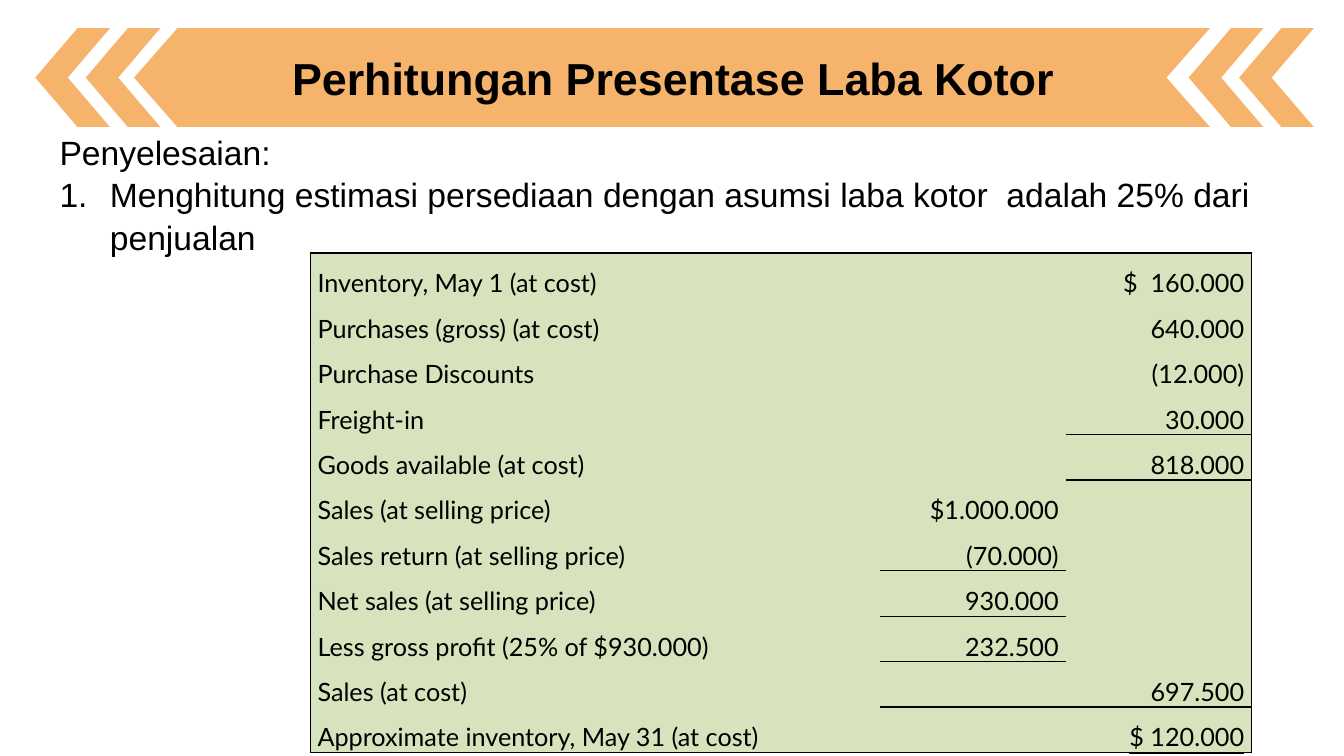
"""Build the gross profit percentage slide on a grid of 1333 by 750 cells."""
from lxml import etree
from pptx import Presentation, util as u
from pptx.dml.color import RGBColor
from pptx.enum import shapes, text
from pptx.oxml import ns

HUES = {"band": "F3932D", "ink": "000000", "table": "D6E3BC"}
CELL = u.Inches(0.01)
ROWS = [
    ("Inventory, May 1 (at cost)", "", "$  160.000"),
    ("Purchases (gross) (at cost)", "", "640.000"),
    ("Purchase Discounts", "", "(12.000)"),
    ("Freight-in", "", "30.000"),
    ("Goods available (at cost)", "", "818.000"),
    ("Sales (at selling price)", "$1.000.000", ""),
    ("Sales return (at selling price)", "(70.000)", ""),
    ("Net sales (at selling price)", "930.000", ""),
    ("Less gross profit (25% of $930.000)", "232.500", ""),
    ("Sales (at cost)", "", "697.500"),
    ("Approximate inventory, May 31 (at cost)", "", "$ 120.000"),
]
SUMS = {(3, 2), (6, 1), (8, 1), (9, 2)}


def paint(shape):
    shape.shadow.inherit = False
    shape.line.fill.background()
    shape.fill.solid()
    shape.fill.fore_color.rgb = RGBColor.from_string(HUES["band"])
    hue = shape.element.spPr.find(ns.qn("a:solidFill"))[0]
    etree.SubElement(hue, ns.qn("a:alpha"), val="70000")


def style(para, size, face, bold=False):
    for run in para.runs:
        run.font.size = u.Pt(size)
        run.font.name = face
        run.font.bold = bold
        run.font.color.rgb = RGBColor.from_string(HUES["ink"])


deck = Presentation()
deck.slide_width, deck.slide_height = 1333 * CELL, 750 * CELL
slide = deck.slides.add_slide(deck.slide_layouts[1])

for left in (35, 85, 1179, 1229):
    mark = slide.shapes.add_shape(
        shapes.MSO_SHAPE.CHEVRON, left * CELL, 28 * CELL, 74 * CELL, 98 * CELL)
    mark.adjustments[0] = 0.565
    mark.rotation = 180
    paint(mark)

pen = slide.shapes.build_freeform(176, 28, scale=CELL)
pen.add_line_segments(
    [(1200, 28), (1157, 77), (1200, 126), (176, 126), (133, 77)], close=True)
paint(pen.convert_to_shape())

title, body = slide.shapes.title, slide.placeholders[1]
for holder, box in ((title, (35, 37, 1266, 79)), (body, (49, 124, 1232, 131))):
    holder.left, holder.top, holder.width, holder.height = [n * CELL for n in box]
    holder.element.getparent().append(holder.element)
    holder.text_frame.word_wrap = True
    holder.text_frame.auto_size = text.MSO_AUTO_SIZE.NONE

title.text_frame.text = "Perhitungan Presentase Laba Kotor"
title.text_frame.vertical_anchor = text.MSO_ANCHOR.MIDDLE
head = title.text_frame.paragraphs[0]
head.alignment = text.PP_ALIGN.CENTER
style(head, 32, "Arial", True)

body.text_frame.vertical_anchor = text.MSO_ANCHOR.TOP
body.text_frame.text = (
    "Penyelesaian:\n"
    "Menghitung estimasi persediaan dengan asumsi laba kotor  adalah 25% dari penjualan")
for para, dent, kind in zip(body.text_frame.paragraphs, (0, 50), ("buNone", "buAutoNum")):
    para.alignment = text.PP_ALIGN.LEFT
    para.line_spacing = 1.05
    para.space_before = para.space_after = u.Pt(0)
    style(para, 24, "Arial")
    props = para._p.get_or_add_pPr()
    props.set("marL", str(dent * CELL))
    props.set("indent", str(-dent * CELL))
    bullet = etree.SubElement(props, ns.qn("a:" + kind))
    if dent:
        bullet.set("type", "arabicPeriod")

frame = slide.shapes.add_table(
    len(ROWS), 3, 308 * CELL, 251 * CELL, 933 * CELL, len(ROWS) * 45 * CELL)
table = frame.table
table.first_row = table.horz_banding = False
look = frame.element.find(".//" + ns.qn("a:tableStyleId"))
look.text = "{2D5ABB26-0587-4C30-8999-92F81FD0307C}"
for col, span in zip(table.columns, (565, 184, 184)):
    col.width = span * CELL

last = len(ROWS) - 1
for r, row in enumerate(ROWS):
    for c, words in enumerate(row):
        cell = table.cell(r, c)
        cell.margin_left = cell.margin_right = 7 * CELL
        cell.margin_top = cell.margin_bottom = 0
        edges = {
            "L": c == 0,
            "R": c == 2,
            "T": r == 0 or (r - 1, c) in SUMS,
            "B": r == last or (r, c) in SUMS,
        }
        props = cell._tc.get_or_add_tcPr()
        for side, shown in edges.items():
            if shown:
                line = etree.SubElement(props, ns.qn("a:ln" + side), w=str(u.Pt(1)))
                fill = etree.SubElement(line, ns.qn("a:solidFill"))
                etree.SubElement(fill, ns.qn("a:srgbClr"), val=HUES["ink"])
        cell.fill.solid()
        cell.fill.fore_color.rgb = RGBColor.from_string(HUES["table"])
        if words:
            cell.text_frame.text = words
            para = cell.text_frame.paragraphs[0]
            para.alignment = text.PP_ALIGN.RIGHT if c else text.PP_ALIGN.JUSTIFY
            para.line_spacing = 1.5
            style(para, 18, "Lato")

table.cell(last, 2).text_frame.paragraphs[0].runs[0].font.underline = True

deck.save("out.pptx")
